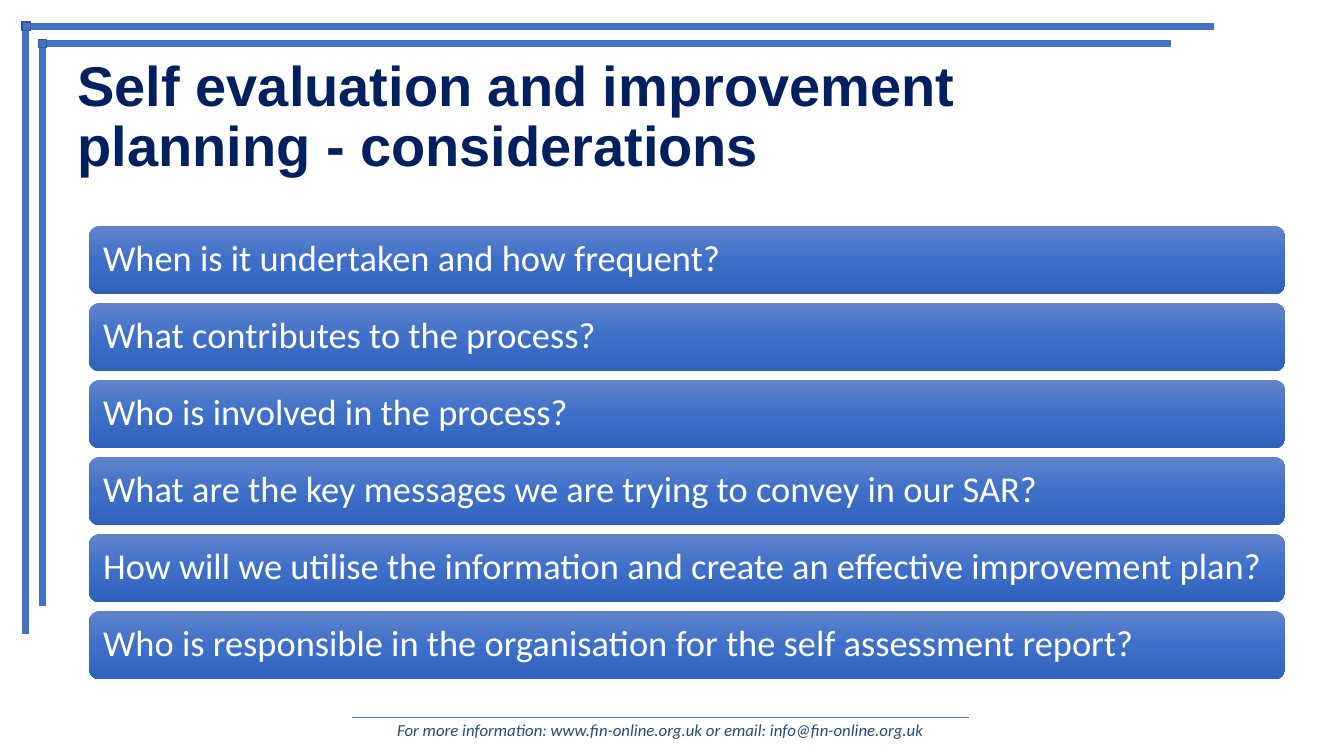
from copy import deepcopy
from dataclasses import dataclass

from lxml.etree import SubElement
from pptx import Presentation
from pptx.dml.color import RGBColor
from pptx.enum.shapes import MSO_CONNECTOR, MSO_SHAPE
from pptx.enum.text import MSO_ANCHOR, PP_ALIGN
from pptx.oxml.ns import qn
from pptx.shapes.autoshape import Shape
from pptx.slide import Slide
from pptx.util import Inches, Pt

BLUE = "4472C4"
BAR_GRADIENT = [(0, "6183CB"), (0.5, "3E70CA"), (1, "3062BB")]
BAR_LEFT, BAR_WIDTH, BAR_HEIGHT = 0.88, 11.87, 0.68
FIRST_BAR_TOP, LAST_BAR_TOP = 2.24, 6.06


@dataclass
class Rule:
    start: tuple[float, float]
    end: tuple[float, float]
    weight: float = 5


@dataclass
class TextStyle:
    font: dict
    color: str
    align: PP_ALIGN = PP_ALIGN.LEFT
    side_inset: float = 0.1
    end_inset: float = 0.05


RULES = [
    Rule((0.26, 0.26), (12.04, 0.26)),
    Rule((0.42, 0.39), (0.42, 6.01)),
    Rule((0.25, 0.22), (0.25, 6.29)),
    Rule((3.49, 7.12), (9.61, 7.12), 0.5),
    Rule((0.43, 0.43), (11.61, 0.43)),
]
CORNERS = [(0.22, 0.22), (0.38, 0.39)]
QUESTIONS = [
    "When is it undertaken and how frequent?",
    "What contributes to the process?",
    "Who is involved in the process?",
    "What are the key messages we are trying to convey in our SAR?",
    "How will we utilise the information and create an effective improvement plan?",
    "Who is responsible in the organisation for the self assessment report?",
]

TITLE = TextStyle({"name": "Arial", "size": Pt(40), "bold": True}, "002060")
FOOTER = TextStyle({"name": "Calibri", "size": Pt(12), "italic": True}, "1F4E79", PP_ALIGN.CENTER)
QUESTION = TextStyle({"name": "Calibri", "size": Pt(26)}, "FFFFFF", side_inset=0.11, end_inset=0.11)


def rgb(value: str) -> RGBColor:
    return RGBColor.from_string(value)


def write_text(box: Shape, text: str, style: TextStyle) -> None:
    frame = box.text_frame
    side, end = Inches(style.side_inset), Inches(style.end_inset)
    frame_format = {
        "word_wrap": True, "vertical_anchor": MSO_ANCHOR.MIDDLE,
        "margin_left": side, "margin_right": side,
        "margin_top": end, "margin_bottom": end,
    }
    for name, value in frame_format.items():
        setattr(frame, name, value)
    para = frame.paragraphs[0]
    para.alignment = style.align
    para.line_spacing = 0.9
    span = para.add_run()
    span.text = text
    for name, value in style.font.items():
        setattr(span.font, name, value)
    span.font.color.rgb = rgb(style.color)


def add_text(page: Slide, area: tuple[float, ...], text: str, style: TextStyle) -> None:
    box = page.shapes.add_textbox(*map(Inches, area))
    write_text(box, text, style)


def add_rule(page: Slide, rule: Rule) -> None:
    line = page.shapes.add_connector(MSO_CONNECTOR.STRAIGHT, *map(Inches, rule.start + rule.end))
    line.line.color.rgb = rgb(BLUE)
    line.line.width = Pt(rule.weight)
    SubElement(line._element.spPr, qn("a:effectLst"))


def add_corner(page: Slide, left: float, top: float) -> None:
    corner = page.shapes.add_shape(MSO_SHAPE.RECTANGLE, *map(Inches, (left, top, 0.08, 0.08)))
    corner.shadow.inherit = False
    corner.fill.solid()
    corner.fill.fore_color.rgb = rgb(BLUE)
    corner.line.color.rgb = rgb("325491")
    corner.line.width = Pt(1)


def add_bar(page: Slide, top: float, question: str) -> None:
    area = (BAR_LEFT, top, BAR_WIDTH, BAR_HEIGHT)
    bar = page.shapes.add_shape(MSO_SHAPE.ROUNDED_RECTANGLE, *map(Inches, area))
    bar.shadow.inherit = False
    bar.line.fill.background()
    bar.fill.gradient()
    bar.fill.gradient_angle = 270
    # A new gradient has two stops; a third is needed
    stop_list = bar._element.spPr.find(qn("a:gradFill")).find(qn("a:gsLst"))
    stop_list.append(deepcopy(stop_list[0]))
    for stop, (position, color) in zip(bar.fill.gradient_stops, BAR_GRADIENT):
        stop.position = position
        stop.color.rgb = rgb(color)
    write_text(bar, question, QUESTION)


def main() -> None:
    deck = Presentation()
    deck.slide_width, deck.slide_height = Inches(13.33), Inches(7.5)
    page = deck.slides.add_slide(deck.slide_layouts[6])

    # Frame lines and their corner squares
    for rule in RULES:
        add_rule(page, rule)
    for left, top in CORNERS:
        add_corner(page, left, top)

    # Title and footer
    add_text(page, (0.67, 0.38, 10.19, 1.59),
             "Self evaluation and improvement planning - considerations", TITLE)
    add_text(page, (2.41, 7.05, 8.28, 0.4),
             "For more information: www.fin-online.org.uk or email: info@fin-online.org.uk", FOOTER)

    # Evenly spaced question bars
    pitch = (LAST_BAR_TOP - FIRST_BAR_TOP) / (len(QUESTIONS) - 1)
    for index, question in enumerate(QUESTIONS):
        add_bar(page, FIRST_BAR_TOP + index * pitch, question)

    deck.save("out.pptx")


if __name__ == "__main__":
    main()
